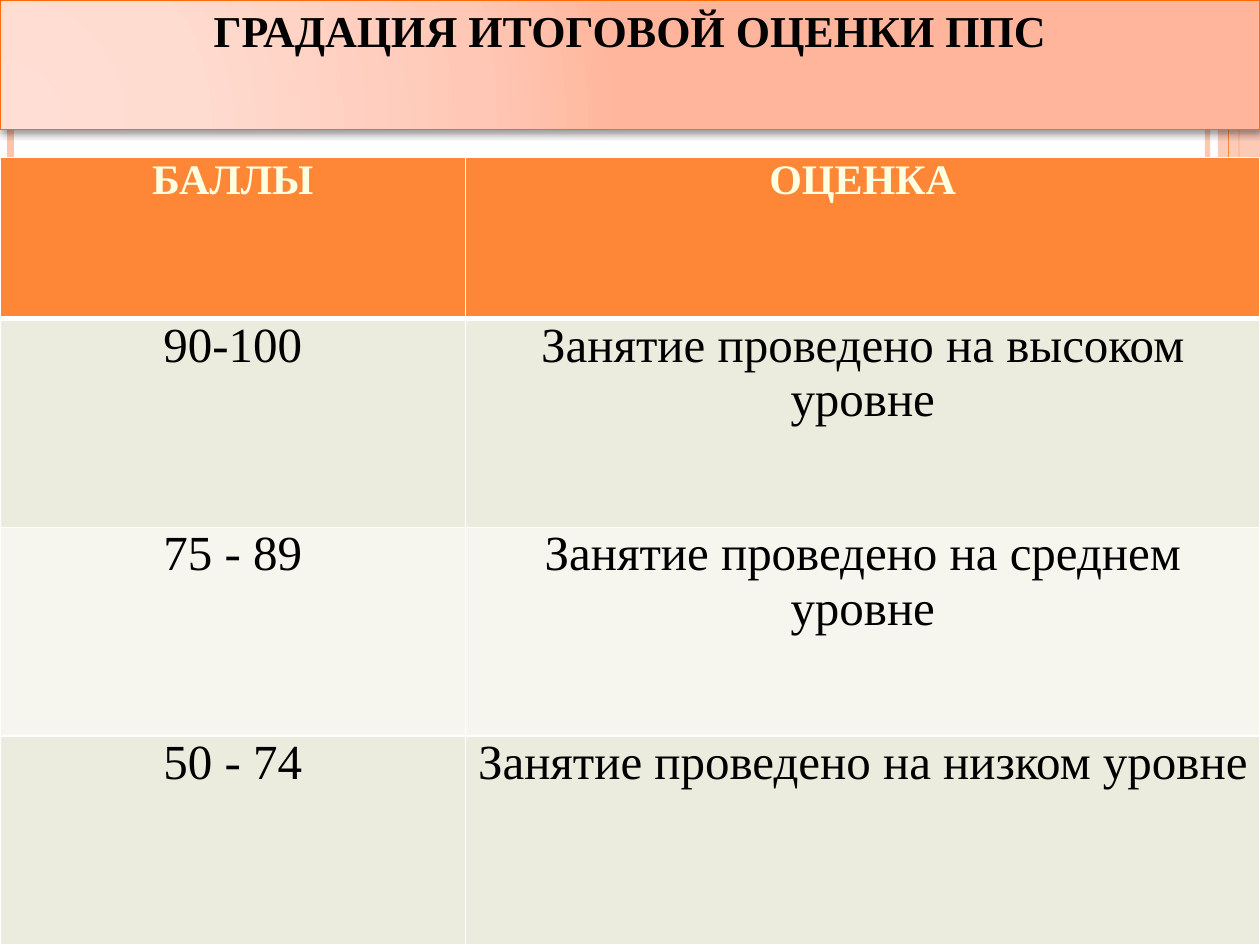
from dataclasses import dataclass

from lxml import etree
from pptx import Presentation
from pptx.dml.color import RGBColor
from pptx.enum.shapes import MSO_CONNECTOR, MSO_SHAPE
from pptx.enum.text import MSO_ANCHOR, PP_ALIGN
from pptx.oxml.ns import qn
from pptx.util import Pt

STRAIGHT = MSO_CONNECTOR.STRAIGHT
RECTANGLE = MSO_SHAPE.RECTANGLE
TOP = MSO_ANCHOR.TOP
CENTER = PP_ALIGN.CENTER
TITLE_ONLY = 5
WIDTH, HEIGHT = 720, 540


@dataclass(frozen=True)
class Theme:
    font: str = "Times New Roman"
    title_size: float = 25.2
    header_size: int = 24
    body_size: int = 28
    text: str = "000000"
    header_text: str = "FFFFE1"
    accent: str = "FE8637"
    pale_accent: str = "FEC3AE"
    title_border: str = "FF6B0A"
    title_stops: tuple = ((0, "FFDED5"), (30, "FFDBD0"), (75, "FFC8B6"), (100, "FFB59B"))
    bands: tuple = ("ECECDE", "F6F6EF")
    grid: str = "FFFFFF"


THEME = Theme()
HEADINGS = ("БАЛЛЫ", "ОЦЕНКА")
GRADES = (
    ("90-100", "Занятие проведено на высоком уровне"),
    ("75 - 89", "Занятие проведено на среднем уровне"),
    ("50 - 74", "Занятие проведено на низком уровне"),
)


def rgb(color):
    return RGBColor.from_string(color)


def add_node(parent, tag, **attributes):
    return etree.SubElement(parent, qn(tag), {key: str(value) for key, value in attributes.items()})


def add_color(parent, color, alpha=100):
    node = add_node(parent, "a:srgbClr", val=color)
    if alpha < 100:
        add_node(node, "a:alpha", val=alpha * 1000)


def set_alpha(properties, percent):
    color = next(properties.iter(qn("a:srgbClr")))
    add_node(color, "a:alpha", val=percent * 1000)


def write_text(frame, text, size, color, bold=False):
    paragraph = frame.paragraphs[0]
    paragraph.alignment = CENTER
    run = paragraph.add_run()
    run.text = text
    run.font.name = THEME.font
    run.font.size = Pt(size)
    run.font.bold = bold
    run.font.color.rgb = rgb(color)


def add_stripe(slide, x, width, color, alpha=100):
    stripe = slide.shapes.add_connector(STRAIGHT, Pt(x), 0, Pt(x), Pt(HEIGHT))
    stripe.line.width = Pt(width)
    stripe.line.color.rgb = rgb(color)
    properties = stripe._element.spPr
    if alpha < 100:
        set_alpha(properties, alpha)
    add_node(properties, "a:effectLst")


def add_side_band(slide, left):
    band = slide.shapes.add_shape(RECTANGLE, Pt(left), 0, Pt(WIDTH - left), Pt(HEIGHT))
    band.shadow.inherit = False
    band.fill.solid()
    band.fill.fore_color.rgb = rgb(THEME.pale_accent)
    set_alpha(band._element.spPr, 87)
    band.line.fill.background()


def format_title(slide, text, height):
    title = slide.shapes.title
    title.left, title.top, title.width, title.height = 0, 0, Pt(WIDTH), Pt(height)
    title.line.color.rgb = rgb(THEME.title_border)
    title.line.width = Pt(1)
    title.fill.gradient()
    properties = title._element.spPr

    # Radial gradient from the lower left corner
    gradient = properties.find(qn("a:gradFill"))
    for child in list(gradient):
        gradient.remove(child)
    stops = add_node(gradient, "a:gsLst")
    for position, color in THEME.title_stops:
        add_color(add_node(stops, "a:gs", pos=position * 1000), color)
    circle = add_node(gradient, "a:path", path="circle")
    add_node(circle, "a:fillToRect", l=5000, t=100000, r=120000, b=10000)

    # Soft shadow below
    effects = add_node(properties, "a:effectLst")
    shadow = add_node(effects, "a:outerShdw", blurRad=Pt(4), dist=Pt(2), dir=90 * 60000,
                      rotWithShape=0)
    add_color(shadow, "000000", alpha=40)

    frame = title.text_frame
    frame.word_wrap = True
    frame.vertical_anchor = TOP
    frame.margin_top = Pt(2)
    write_text(frame, text, THEME.title_size, THEME.text, bold=True)
    # Bring the title in front of the stripes
    slide.shapes._spTree.append(title._element)


def set_borders(cell, **widths):
    properties = cell._tc.get_or_add_tcPr()
    for index, side in enumerate("LRTB"):
        border = etree.Element(qn(f"a:ln{side}"), w=str(Pt(widths.get(side, 1))))
        add_color(add_node(border, "a:solidFill"), THEME.grid)
        properties.insert(index, border)


def fill_cell(cell, text, fill, size, color, bold=False, **borders):
    cell.margin_left = cell.margin_right = Pt(5)
    cell.margin_top = cell.margin_bottom = 0
    cell.vertical_anchor = TOP
    cell.fill.solid()
    cell.fill.fore_color.rgb = rgb(fill)
    write_text(cell.text_frame, text, size, color, bold)
    set_borders(cell, **borders)


def add_grade_table(slide, top, header_height, score_width):
    height = HEIGHT - top
    table = slide.shapes.add_table(len(GRADES) + 1, len(HEADINGS), 0, Pt(top),
                                   Pt(WIDTH), Pt(height)).table
    for column, width in zip(table.columns, (score_width, WIDTH - score_width)):
        column.width = Pt(width)
    for index, row in enumerate(table.rows):
        row.height = Pt((height - header_height) / len(GRADES) if index else header_height)

    for column, heading in enumerate(HEADINGS):
        fill_cell(table.cell(0, column), heading, THEME.accent, THEME.header_size,
                  THEME.header_text, bold=True, B=3)
    for index, grade in enumerate(GRADES):
        for column, text in enumerate(grade):
            fill_cell(table.cell(index + 1, column), text, THEME.bands[index % 2],
                      THEME.body_size, THEME.text, T=1 if index else 3)


def main():
    presentation = Presentation()
    presentation.slide_width, presentation.slide_height = Pt(WIDTH), Pt(HEIGHT)
    slide = presentation.slides.add_slide(presentation.slide_layouts[TITLE_ONLY])

    # Decorative stripes along the sides
    add_stripe(slide, 690, 3, THEME.pale_accent, alpha=93)
    add_stripe(slide, 6, 4.5, THEME.pale_accent)
    add_stripe(slide, 708, 1.5, THEME.accent)
    add_side_band(slide, 696)
    add_stripe(slide, 702, 0.75, THEME.accent)

    # Title and grading scale
    format_title(slide, "ГРАДАЦИЯ ИТОГОВОЙ ОЦЕНКИ ППС", height=74)
    add_grade_table(slide, top=90, header_height=92, score_width=266)

    presentation.save("out.pptx")


if __name__ == "__main__":
    main()
